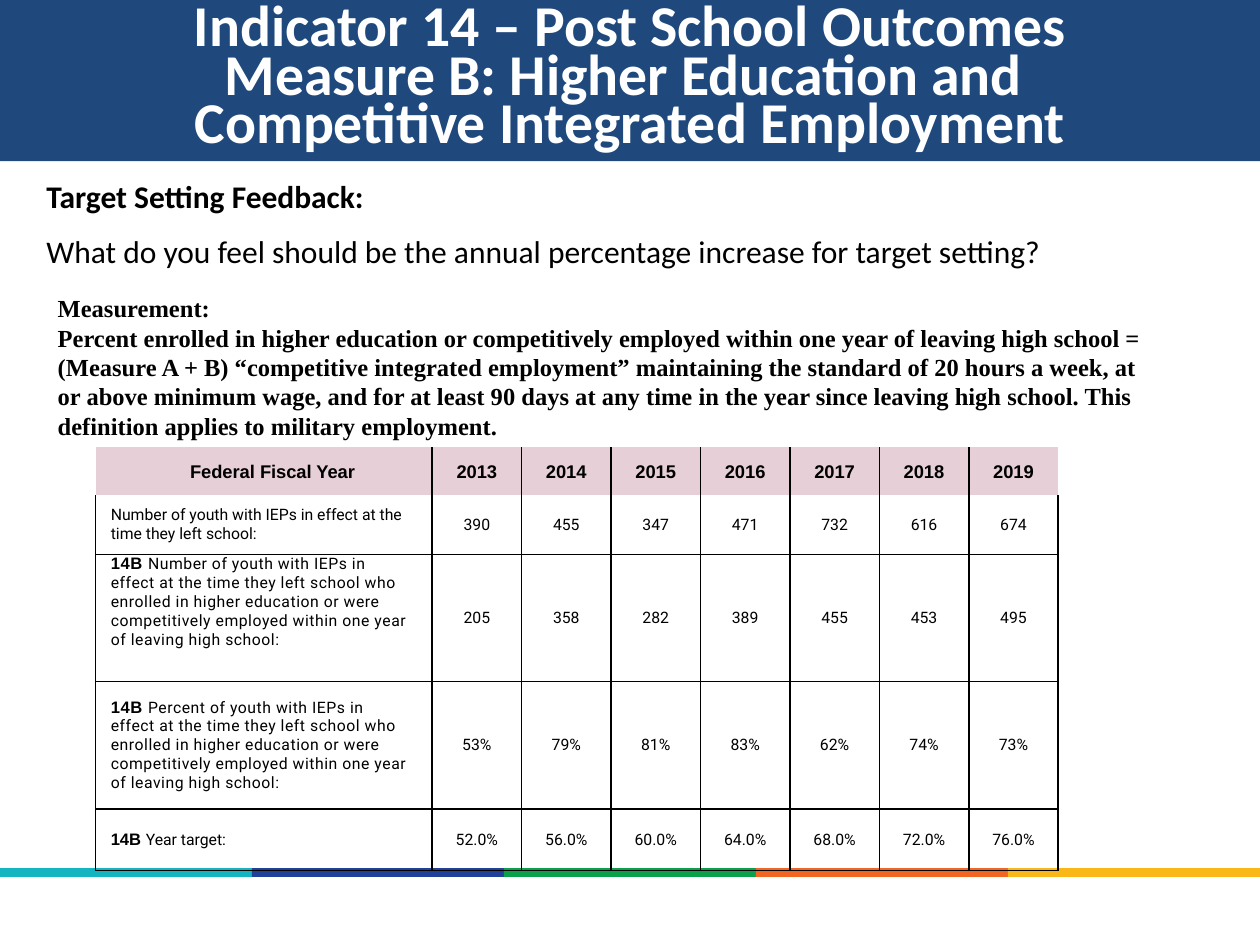
from pptx import Presentation
from pptx.util import Inches, Pt
from pptx.dml.color import RGBColor as RGB
from pptx.enum.shapes import MSO_SHAPE as SHAPE
from pptx.enum.text import PP_ALIGN as ALIGN, MSO_ANCHOR as ANCHOR, MSO_AUTO_SIZE as FIT
from pptx.oxml import parse_xml
from pptx.oxml.ns import nsdecls

NAVY, PINK = RGB(0x1F, 0x49, 0x7D), RGB(0xE6, 0xCF, 0xD7)
BLACK, WHITE = RGB(0, 0, 0), RGB(255, 255, 255)
BARS = [RGB(0x14, 0xB4, 0xC0), RGB(0x20, 0x40, 0x9A), RGB(0x0B, 0xA1, 0x4B),
        RGB(0xF2, 0x65, 0x22), RGB(0xF9, 0xB8, 0x17)]
WIDE, HIGH = 10, 7.5

TITLE = ["Indicator 14 – Post School Outcomes",
         "Measure B: Higher Education and ",
         "Competitive Integrated Employment"]
ASK = ["Target Setting Feedback:",
       "What do you feel should be the annual percentage increase for target setting?"]
MEASURE = [
    "Measurement:",
    "Percent enrolled in higher education or competitively employed within one year "
    "of leaving high school = (Measure A + B) “competitive integrated employment” "
    "maintaining the standard of 20 hours a week, at or above minimum wage, and for "
    "at least 90 days at any time in the year since leaving high school. This "
    "definition applies to military employment."]

YOUTH = "of youth with IEPs in effect at the time they left school"
GROUP = (YOUTH + " who enrolled in higher education or were competitively employed "
         "within one year of leaving high school:")
HEAD = ["Federal Fiscal Year"] + [str(year) for year in range(2013, 2020)]
# Bold tag, label, letter spacing (hundredths of a point), values
ROWS = [
    ("", f"Number {YOUTH}:", 0, [390, 455, 347, 471, 732, 616, 674]),
    ("14B ", f"Number {GROUP}", 30, [205, 358, 282, 389, 455, 453, 495]),
    ("14B ", f"Percent {GROUP}", 30,
     [f"{n}%" for n in (53, 79, 81, 83, 62, 74, 73)]),
    ("14B ", "Year target:", 0, [f"{n}.0%" for n in range(52, 77, 4)]),
]
COLS = [2.67] + [0.71] * 7
TALL = [0.38, 0.47, 1.01, 1.01, 0.49]


def style(run, font, size, color=BLACK, bold=False):
    run.font.name, run.font.size = font, Pt(size)
    run.font.bold, run.font.color.rgb = bold, color


def add_text(slide, box, lines, font, size):
    """Add a wrapped text box whose first line is bold."""
    shape = slide.shapes.add_textbox(*map(Inches, box))
    frame = shape.text_frame
    frame.word_wrap = True
    frame.text = "\n".join(lines)
    for i, para in enumerate(frame.paragraphs):
        style(para.runs[0], font, size, bold=i == 0)
    return frame


def add_lines(cell, sides):
    """Draw black borders on the named sides and clear the others."""
    props = cell._tc.get_or_add_tcPr()
    for i, side in enumerate("LRTB"):
        fill = ('<a:solidFill><a:srgbClr val="000000"/></a:solidFill>'
                if side in sides else "<a:noFill/>")
        props.insert(i, parse_xml(
            f'<a:ln{side} {nsdecls("a")} w="12700">{fill}</a:ln{side}>'))


def fill_cell(cell, parts, align, lead):
    """Write (text, font, size, bold, letter spacing) parts in a cell."""
    cell.margin_left = cell.margin_right = cell.margin_top = cell.margin_bottom = 0
    cell.vertical_anchor = ANCHOR.MIDDLE
    para = cell.text_frame.paragraphs[0]
    para.alignment, para.line_spacing = align, Pt(lead)
    for text, font, size, bold, gap in parts:
        run = para.add_run()
        run.text = text
        style(run, font, size, bold=bold)
        if gap:
            run.font._element.set("spc", str(gap))


def add_title(slide):
    title = slide.shapes.title
    title.left, title.top, title.width, title.height = map(Inches, (0, 0, WIDE, 1.28))
    title.fill.solid()
    title.fill.fore_color.rgb = NAVY
    frame = title.text_frame
    frame.text = "\n".join(TITLE)
    frame.auto_size, frame.vertical_anchor = FIT.NONE, ANCHOR.MIDDLE
    frame.margin_left = frame.margin_right = Inches(0.07)
    frame.margin_top = frame.margin_bottom = Inches(0.04)
    for para in frame.paragraphs:
        para.alignment, para.line_spacing = ALIGN.CENTER, 0.7
        style(para.runs[0], "Calibri", 33, WHITE, True)


def add_bars(slide):
    step = WIDE / len(BARS)
    for i, color in enumerate(BARS):
        bar = slide.shapes.add_shape(
            SHAPE.RECTANGLE, *map(Inches, (i * step, 6.89, step, 0.07)))
        bar.shadow.inherit = False
        bar.fill.solid()
        bar.fill.fore_color.rgb = color
        bar.line.fill.background()


def add_grid(slide):
    box = (0.76, 3.55, sum(COLS), sum(TALL))
    table = slide.shapes.add_table(len(TALL), len(COLS), *map(Inches, box)).table
    table.first_row = table.horz_banding = False
    for col, size in zip(table.columns, COLS):
        col.width = Inches(size)
    for row, size in zip(table.rows, TALL):
        row.height = Inches(size)

    for c, text in enumerate(HEAD):
        cell = table.cell(0, c)
        fill_cell(cell, [(text, "Arial", 10.5, True, 0)],
                  ALIGN.CENTER if c else ALIGN.RIGHT, 12.6)
        add_lines(cell, ("L" if c else "") + ("R" if c < len(HEAD) - 1 else ""))
        cell.fill.solid()
        cell.fill.fore_color.rgb = PINK
    table.cell(0, 0).margin_right = Inches(0.61)

    for r, (tag, label, gap, values) in enumerate(ROWS, 1):
        parts = [(tag, "Arial", 9.5, True, gap)] if tag else []
        parts.append((label, "Roboto", 9, False, gap))
        first = table.cell(r, 0)
        fill_cell(first, parts, ALIGN.LEFT, 10.8)
        first.margin_left, first.margin_right = Inches(0.12), Inches(0.16)
        for c, value in enumerate(values, 1):
            fill_cell(table.cell(r, c), [(str(value), "Roboto", 9, False, 0)],
                      ALIGN.CENTER, 10.8)
        for c in range(len(COLS)):
            cell = table.cell(r, c)
            add_lines(cell, "LRB" if r == 1 else "LRTB")
            cell.fill.background()
    table.cell(2, 0).vertical_anchor = ANCHOR.TOP


def main():
    deck = Presentation()
    deck.slide_width, deck.slide_height = Inches(WIDE), Inches(HIGH)
    slide = deck.slides.add_slide(deck.slide_layouts[5])
    add_title(slide)
    add_bars(slide)
    ask = add_text(slide, (0.27, 1.36, 9.04, 0.9), ASK, "Calibri", 18)
    ask.paragraphs[1].space_before = Pt(9.6)
    add_grid(slide)
    note = add_text(slide, (0.36, 2.27, 8.86, 1.28), MEASURE, "Times New Roman", 14)
    note.vertical_anchor = ANCHOR.MIDDLE
    note.paragraphs[1].runs[0].font.bold = True
    deck.save("out.pptx")


if __name__ == "__main__":
    main()
